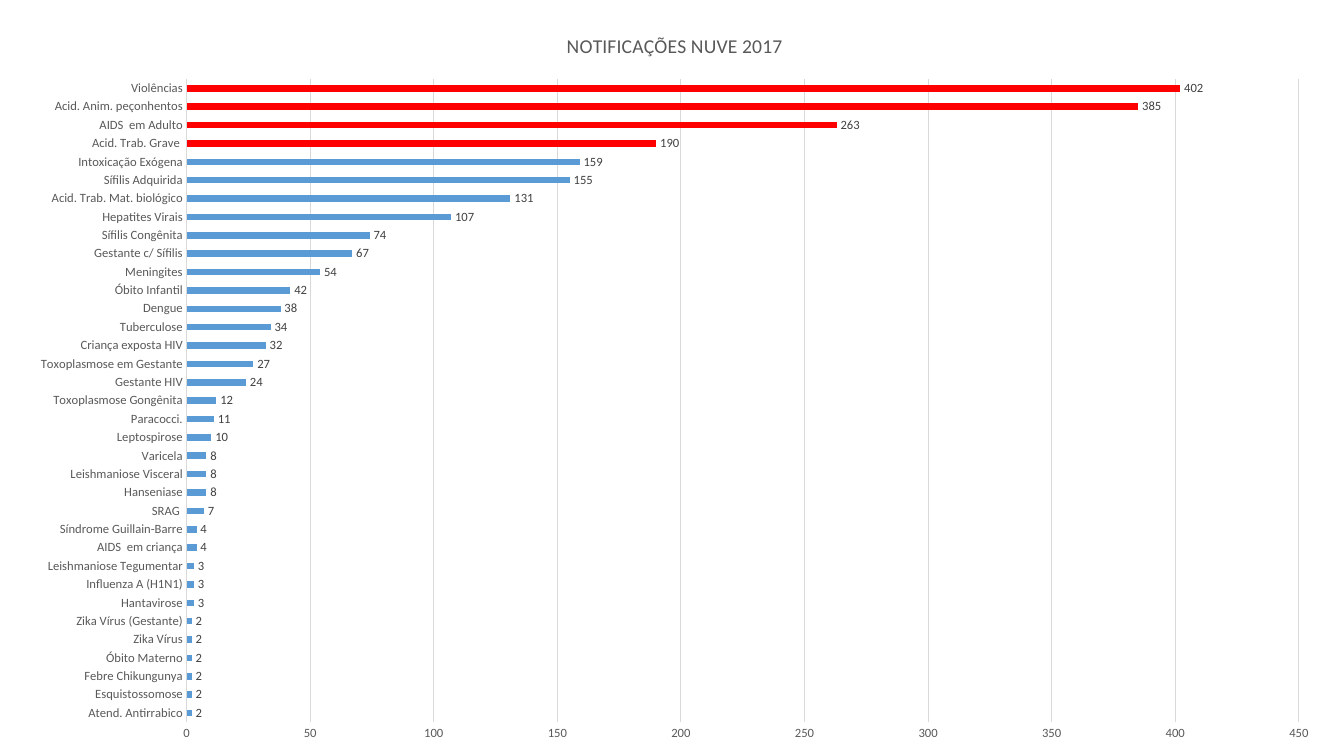
from pptx import Presentation
from pptx.chart.data import CategoryChartData
from pptx.dml.color import RGBColor
from pptx.enum.chart import XL_CHART_TYPE, XL_LABEL_POSITION, XL_TICK_MARK
from pptx.oxml import parse_xml
from pptx.oxml.ns import nsdecls, qn
from pptx.util import Pt

NOTIFICATIONS = [
    ("Atend. Antirrabico", 2),
    ("Esquistossomose", 2),
    ("Febre Chikungunya", 2),
    ("Óbito Materno", 2),
    ("Zika Vírus", 2),
    ("Zika Vírus (Gestante)", 2),
    ("Hantavirose", 3),
    ("Influenza A (H1N1)", 3),
    ("Leishmaniose Tegumentar", 3),
    ("AIDS  em criança", 4),
    ("Síndrome Guillain-Barre", 4),
    ("SRAG ", 7),
    ("Hanseniase", 8),
    ("Leishmaniose Visceral", 8),
    ("Varicela", 8),
    ("Leptospirose", 10),
    ("Paracocci.", 11),
    ("Toxoplasmose Gongênita", 12),
    ("Gestante HIV", 24),
    ("Toxoplasmose em Gestante", 27),
    ("Criança exposta HIV", 32),
    ("Tuberculose", 34),
    ("Dengue", 38),
    ("Óbito Infantil", 42),
    ("Meningites", 54),
    ("Gestante c/ Sífilis", 67),
    ("Sífilis Congênita", 74),
    ("Hepatites Virais", 107),
    ("Acid. Trab. Mat. biológico", 131),
    ("Sífilis Adquirida", 155),
    ("Intoxicação Exógena", 159),
    ("Acid. Trab. Grave ", 190),
    ("AIDS  em Adulto", 263),
    ("Acid. Anim. peçonhentos", 385),
    ("Violências", 402),
]
HIGHLIGHTED = 4
GREY, DARK, RULE, BLUE, RED = "595959", "404040", "D9D9D9", "5B9BD5", "FF0000"


def rgb(color):
    """Turn a hex string into a colour."""
    return RGBColor.from_string(color)


def set_font(font, size, color):
    """Set typeface, size and colour of a font."""
    font.name = "Calibri"
    font.size = Pt(size)
    font.bold = False
    font.color.rgb = rgb(color)


def set_line(line, color):
    """Give a line the thin rule style."""
    line.color.rgb = rgb(color)
    line.width = Pt(0.75)


def set_fill(fill, color):
    """Fill with one solid colour."""
    fill.solid()
    fill.fore_color.rgb = rgb(color)


def style_title(chart, text):
    """Write the chart title."""
    tf = chart.chart_title.text_frame
    tf.text = text
    set_font(tf.paragraphs[0].font, 14, GREY)
    chart.chart_title.include_in_layout = False


def style_axes(chart):
    """Style both axes and the gridlines."""
    cat, val = chart.category_axis, chart.value_axis
    for axis in (cat, val):
        axis.major_tick_mark = axis.minor_tick_mark = XL_TICK_MARK.NONE
        set_font(axis.tick_labels.font, 9, GREY)
    set_line(cat.format.line, RULE)
    val.format.line.fill.background()
    val.minimum_scale, val.maximum_scale, val.major_unit = 0, 450, 50
    val.tick_labels.number_format = "0"
    val.tick_labels.number_format_is_linked = False
    val.has_major_gridlines = True
    set_line(val.major_gridlines.format.line, RULE)


def style_bars(plot):
    """Colour the bars, mark the largest ones and label all."""
    plot.gap_width = 182
    plot.vary_by_categories = False
    ser = plot.series[0]
    ser.invert_if_negative = False
    set_fill(ser.format.fill, BLUE)
    count = len(NOTIFICATIONS)
    for i in range(count - HIGHLIGHTED, count):
        set_fill(ser.points[i].format.fill, RED)
    labels = ser.data_labels
    labels.show_value = True
    labels.position = XL_LABEL_POSITION.OUTSIDE_END
    labels.number_format = "0"
    labels.number_format_is_linked = False
    set_font(labels.font, 9, DARK)


def place_plot(chart, **box):
    """Place the inner plot area by fractions of the chart."""
    area = chart.element.find(".//" + qn("c:plotArea"))
    for old in area.findall(qn("c:layout")):
        area.remove(old)
    sizes = "".join(f'<c:{k} val="{v}"/>' for k, v in box.items())
    area.insert(0, parse_xml(
        f'<c:layout {nsdecls("c")}><c:manualLayout><c:layoutTarget val="inner"/>'
        f'<c:xMode val="edge"/><c:yMode val="edge"/>{sizes}'
        "</c:manualLayout></c:layout>"))


def add_bar_chart(s, title, x, y, w, h):
    """Add the bar chart of notifications."""
    data = CategoryChartData(number_format="0")
    names, values = zip(*NOTIFICATIONS)
    data.categories = names
    data.add_series("Series 1", values)
    chart = s.shapes.add_chart(XL_CHART_TYPE.BAR_CLUSTERED,
                               Pt(x), Pt(y), Pt(w), Pt(h), data).chart
    set_font(chart.font, 10, "000000")
    chart.has_legend = False
    style_title(chart, title)
    style_axes(chart)
    style_bars(chart.plots[0])
    place_plot(chart, x=0.13, y=0.095, w=0.843, h=0.86)


def main():
    """Build and save the slide."""
    prs = Presentation()
    prs.slide_width, prs.slide_height = Pt(960), Pt(540)
    s = prs.slides.add_slide(prs.slide_layouts[6])
    add_bar_chart(s, "NOTIFICAÇÕES NUVE 2017", 10.8, 5.8, 942.5, 534.2)
    prs.save("out.pptx")


if __name__ == "__main__":
    main()
